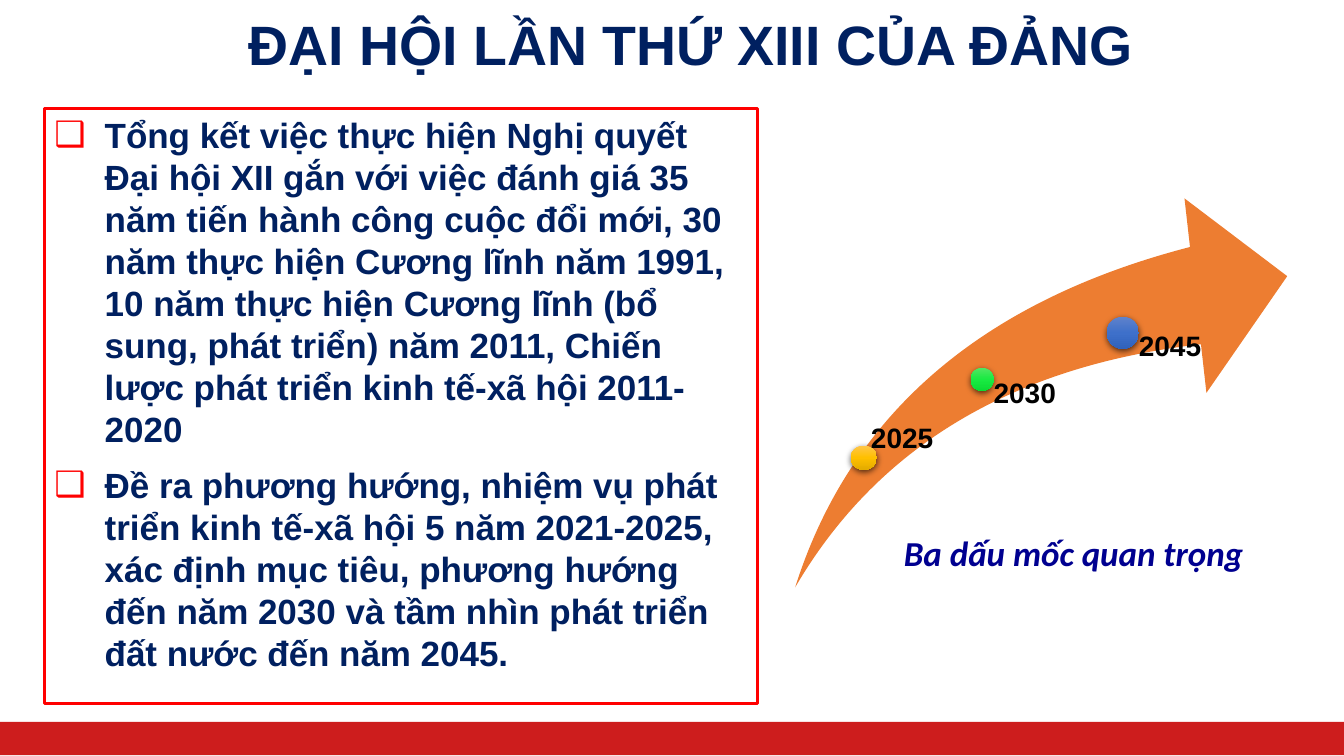
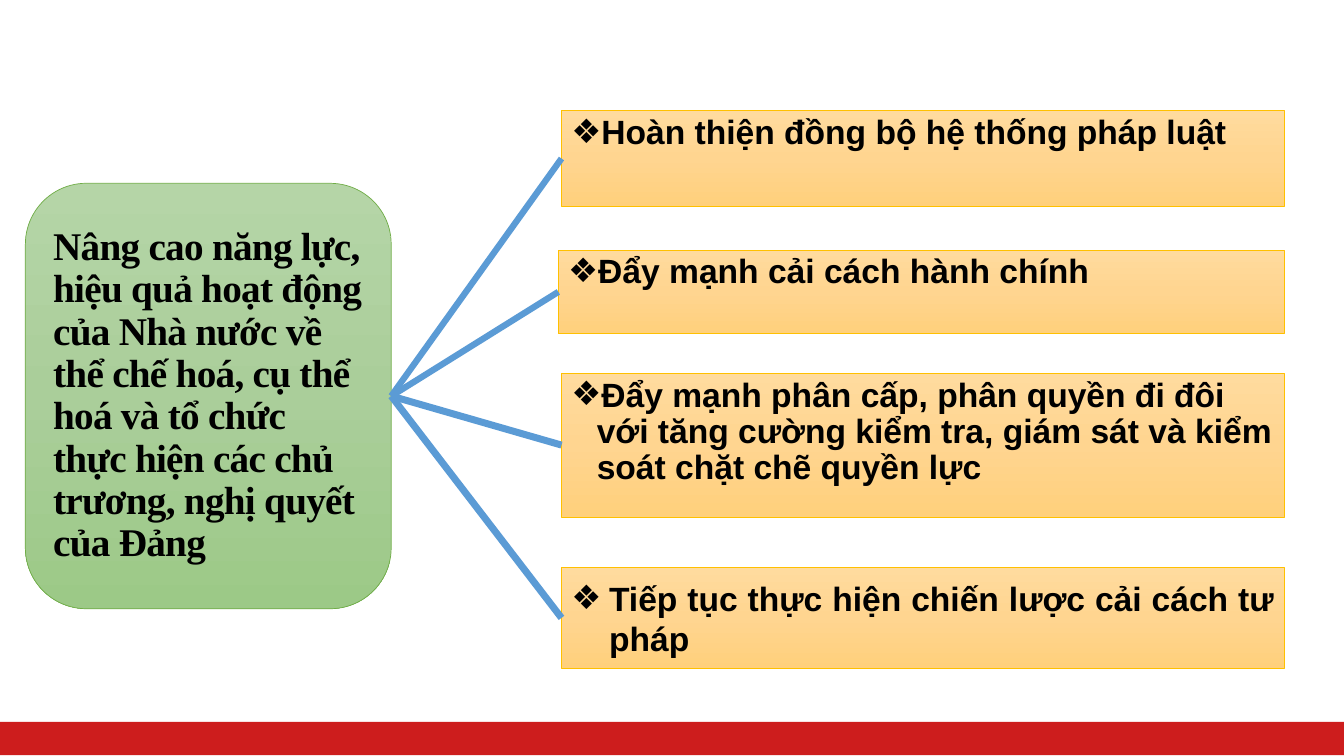
"""Build two slides on the Party congress: its milestones and its state-reform tasks."""
from copy import deepcopy
from dataclasses import dataclass

from lxml import etree
from pptx import Presentation
from pptx.dml.color import RGBColor
from pptx.enum.shapes import MSO_CONNECTOR, MSO_SHAPE
from pptx.enum.text import MSO_ANCHOR, PP_ALIGN
from pptx.oxml import parse_xml
from pptx.oxml.ns import nsdecls, qn
from pptx.util import Cm, Pt

RECTANGLE = MSO_SHAPE.RECTANGLE
ROUNDED = MSO_SHAPE.ROUNDED_RECTANGLE
SWOOSH = MSO_SHAPE.SWOOSH_ARROW
OVAL = MSO_SHAPE.OVAL
STRAIGHT = MSO_CONNECTOR.STRAIGHT
TOP = MSO_ANCHOR.TOP
MIDDLE = MSO_ANCHOR.MIDDLE
LEFT = PP_ALIGN.LEFT
JUSTIFY = PP_ALIGN.JUSTIFY


@dataclass(frozen=True)
class Theme:
    """Colours, fonts and type sizes."""
    band: str = "CD1D1D"
    navy: str = "002060"
    caption: str = "000090"
    black: str = "000000"
    red: str = "FF0000"
    arrow: str = "ED7D31"
    link: str = "5B9BD5"
    panel: tuple = ("FFDB9E", "FFD590", "FFD07C")
    panel_line: str = "FFC000"
    topic: tuple = ("B5D5A7", "AACE9A", "9CC987")
    topic_line: str = "70AD47"
    gold_dot: tuple = ("FFC64B", "FFC000", "E3AB00")
    green_dot: tuple = ("51E663", "19EA42", "0CDB34")
    blue_dot: tuple = ("6183CB", "3E70CA", "3062BB")
    sans: str = "Arial"
    caption_font: str = "Calibri"
    serif: str = "Times New Roman"
    title_size: float = 39.6
    body_size: float = 25
    panel_size: float = 24
    topic_size: float = 28
    year_size: float = 20


theme = Theme()


def write(shape, text, size, color, font=theme.sans, anchor=TOP, align=LEFT,
          spacing=1.0, bullet=None, bullet_color=None, indent=0):
    """Fill a shape with bold paragraphs, bulleted if asked."""
    frame = shape.text_frame
    frame.word_wrap = True
    frame.vertical_anchor = anchor
    frame.text = text
    for number, paragraph in enumerate(frame.paragraphs):
        paragraph.alignment = align
        paragraph.line_spacing = spacing
        if number:
            paragraph.space_before = Pt(10)
        if bullet:
            properties = paragraph._p.get_or_add_pPr()
            properties.set("marL", str(Cm(indent)))
            properties.set("indent", str(-Cm(indent)))
            bullet_fill = etree.SubElement(properties, qn("a:buClr"))
            etree.SubElement(bullet_fill, qn("a:srgbClr"), val=bullet_color or color)
            etree.SubElement(properties, qn("a:buFont"), typeface=font)
            etree.SubElement(properties, qn("a:buChar"), char=bullet)
        for run in paragraph.runs:
            run.font.name = font
            run.font.size = Pt(size)
            run.font.bold = True
            run.font.color.rgb = RGBColor.from_string(color)


def add_gradient_shape(slide, kind, box, colors, line=None):
    """Add a shape with a three-stop gradient running downwards."""
    shape = slide.shapes.add_shape(kind, *map(Cm, box))
    shape.shadow.inherit = False
    shape.fill.gradient()
    shape.fill.gradient_angle = 270
    first_stop = shape.element.spPr.find(".//" + qn("a:gs"))
    first_stop.addnext(deepcopy(first_stop))
    for number, (stop, color) in enumerate(zip(shape.fill.gradient_stops, colors)):
        stop.position = number / 2
        stop.color.rgb = RGBColor.from_string(color)
    if line:
        shape.line.color.rgb = RGBColor.from_string(line)
        shape.line.width = Pt(0.5)
    else:
        shape.line.fill.background()
    return shape


presentation = Presentation()
presentation.slide_width = Cm(33.87)
presentation.slide_height = Cm(19.05)
blank = presentation.slide_layouts[6]
congress = presentation.slides.add_slide(blank)
reform = presentation.slides.add_slide(blank)

band = congress.shapes.add_shape(RECTANGLE, 0, Cm(18.19), presentation.slide_width, Cm(0.84))
band.shadow.inherit = False
band.fill.solid()
band.fill.fore_color.rgb = RGBColor.from_string(theme.band)
band.line.fill.background()
band.element.nvSpPr.cNvPr.set("id", "20")
blank.shapes.element.append(band.element)

title = congress.shapes.add_textbox(Cm(6.02), Cm(0.43), Cm(27.85), Cm(1.52))
write(title, "ĐẠI HỘI LẦN THỨ XIII CỦA ĐẢNG", theme.title_size, theme.navy,
      anchor=MIDDLE, spacing=0.9)

agenda = congress.shapes.add_shape(RECTANGLE, Cm(1.12), Cm(2.74), Cm(17.98), Cm(14.99))
agenda.shadow.inherit = False
agenda.fill.background()
agenda.line.color.rgb = RGBColor.from_string(theme.red)
agenda.line.width = Pt(2.25)
write(agenda,
      "Tổng kết việc thực hiện Nghị quyết Đại hội XII gắn với việc đánh giá 35 năm "
      "tiến hành công cuộc đổi mới, 30 năm thực hiện Cương lĩnh năm 1991, 10 năm thực "
      "hiện Cương lĩnh (bổ sung, phát triển) năm 2011, Chiến lược phát triển kinh "
      "tế-xã hội 2011-2020\n"
      "Đề ra phương hướng, nhiệm vụ phát triển kinh tế-xã hội 5 năm 2021-2025, xác "
      "định mục tiêu, phương hướng đến năm 2030 và tầm nhìn phát triển đất nước đến "
      "năm 2045.",
      theme.body_size, theme.navy, bullet="❑", bullet_color=theme.red, indent=1.27)

arrow = congress.shapes.add_shape(SWOOSH, Cm(20.04), Cm(5), Cm(12.4), Cm(9.8))
arrow.shadow.inherit = False
arrow.adjustments[0] = 0.25
arrow.adjustments[1] = 0.25
arrow.fill.solid()
arrow.fill.fore_color.rgb = RGBColor.from_string(theme.arrow)
arrow.line.fill.background()

milestones = [
    ("2025", (21.44, 11.23, 0.66, 0.61), theme.gold_dot, (21.77, 10.69), 0.18),
    ("2030", (24.46, 9.27, 0.58, 0.58), theme.green_dot, (24.74, 9.55), 0.3),
    ("2045", (27.89, 7.98, 0.81, 0.81), theme.blue_dot, (28.27, 8.38), 0.43),
]
for year, dot_box, colors, (left, top), inset in milestones:
    dot = add_gradient_shape(congress, OVAL, dot_box, colors)
    dot.element.spPr.find(qn("a:effectLst")).append(parse_xml(
        f'<a:outerShdw {nsdecls("a")} blurRad="57150" dist="19050" dir="5400000" '
        f'algn="ctr" rotWithShape="0"><a:srgbClr val="{theme.black}">'
        '<a:alpha val="63000"/></a:srgbClr></a:outerShdw>'))
    label = congress.shapes.add_textbox(Cm(left), Cm(top), Cm(2.95), Cm(1))
    write(label, year, theme.year_size, theme.black, spacing=0.9)
    frame = label.text_frame
    frame.margin_left = Cm(inset)
    frame.margin_top = frame.margin_right = frame.margin_bottom = 0

caption = congress.shapes.add_textbox(Cm(22.53), Cm(13.28), Cm(9.8), Cm(1.32))
write(caption, "Ba dấu mốc quan trọng", theme.body_size, theme.caption, theme.caption_font)
caption.text_frame.paragraphs[0].runs[0].font.italic = True

topic = add_gradient_shape(reform, ROUNDED, (0.64, 4.62, 9.22, 10.72),
                           theme.topic, theme.topic_line)
write(topic,
      "Nâng cao năng lực, hiệu quả hoạt động của Nhà nước về thể chế hoá, cụ thể hoá "
      "và tổ chức thực hiện các chủ trương, nghị quyết của Đảng",
      theme.topic_size, theme.black, theme.serif, MIDDLE, spacing=0.9)
for run_properties in topic.element.iter(qn("a:rPr")):
    run_properties.set("spc", "-50")

panels_right = 32.36
tasks = [
    ("Hoàn thiện đồng bộ hệ thống pháp luật", 14.15, 2.79, 2.41, 4.5, TOP, LEFT, 0.9, 0.64),
    ("Đẩy mạnh cải cách hành chính", 14.07, 6.3, 2.11, 4.5, TOP, LEFT, 0.9, 0.64),
    ("Đẩy mạnh phân cấp, phân quyền đi đôi với tăng cường kiểm tra, giám sát và kiểm "
     "soát chặt chẽ quyền lực", 14.15, 9.4, 3.63, 5, TOP, LEFT, 0.9, 0.64),
    ("Tiếp tục thực hiện chiến lược cải cách tư pháp",
     14.15, 14.3, 2.54, 5, MIDDLE, JUSTIFY, 1.0, 0.95),
]
for text, left, top, height, weight, anchor, align, spacing, indent in tasks:
    panel = add_gradient_shape(reform, RECTANGLE, (left, top, panels_right - left, height),
                               theme.panel, theme.panel_line)
    write(panel, text, theme.panel_size, theme.black, anchor=anchor, align=align,
          spacing=spacing, bullet="❖", indent=indent)
    link = reform.shapes.add_connector(
        STRAIGHT, topic.left + topic.width, topic.top + topic.height // 2,
        panel.left, panel.top + panel.height // 2)
    link.line.color.rgb = RGBColor.from_string(theme.link)
    link.line.width = Pt(weight)
    etree.SubElement(link.element.spPr, qn("a:effectLst"))

presentation.save("out.pptx")
